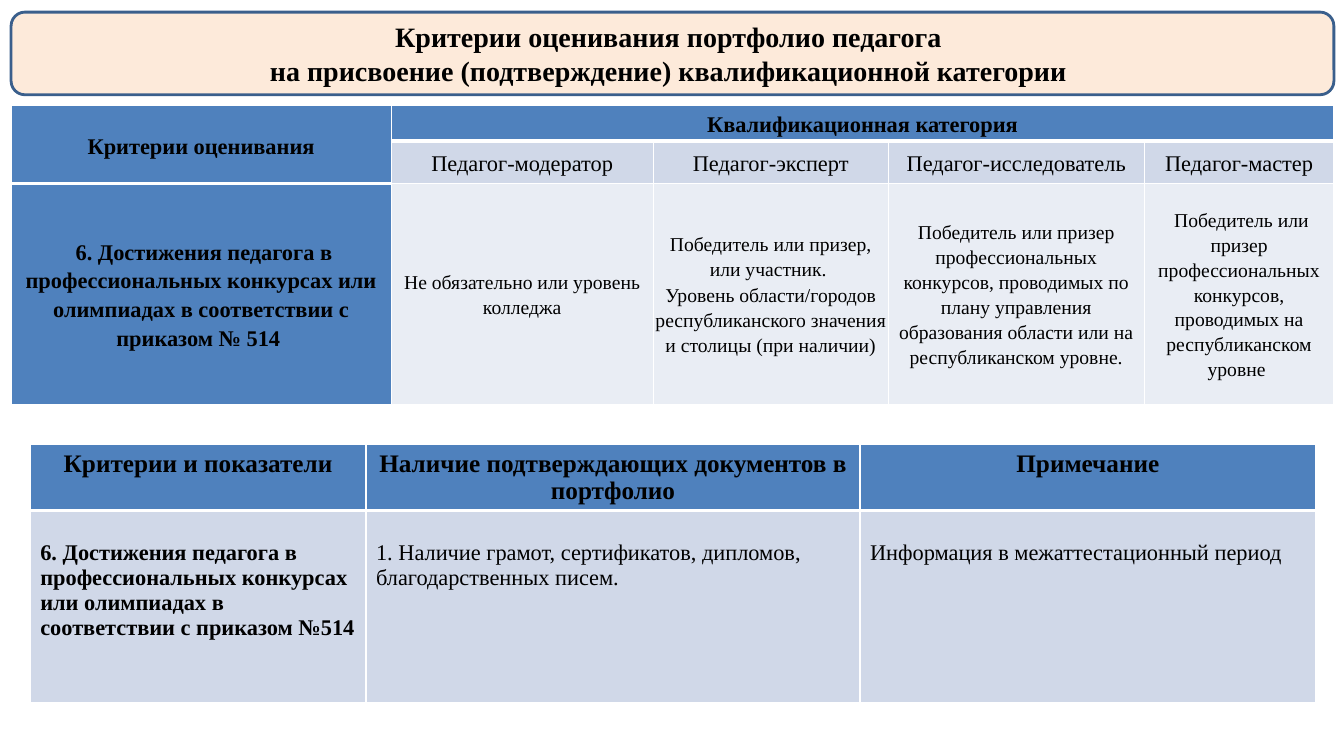
from dataclasses import dataclass

from lxml import etree
from pptx import Presentation
from pptx.dml.color import RGBColor
from pptx.enum.shapes import MSO_SHAPE
from pptx.enum.text import MSO_ANCHOR, MSO_AUTO_SIZE, PP_ALIGN
from pptx.oxml.ns import qn
from pptx.util import Inches, Pt

ROUNDED = MSO_SHAPE.ROUNDED_RECTANGLE
CENTER, LEFT = PP_ALIGN.CENTER, PP_ALIGN.LEFT
MIDDLE, TOP = MSO_ANCHOR.MIDDLE, MSO_ANCHOR.TOP
NO_AUTOFIT = MSO_AUTO_SIZE.NONE
TITLE_ONLY = 5


@dataclass(frozen=True)
class Theme:
    font: str = "Times New Roman"
    text: str = "000000"
    header: str = "4F81BD"
    band: str = "D0D8E8"
    pale: str = "E9EDF4"
    banner: str = "FDEADA"
    outline: str = "3A5F8C"
    border: str = "FFFFFF"
    title_size: int = 20
    heading_size: int = 18
    label_size: int = 16
    body_size: int = 14


THEME = Theme()


@dataclass(frozen=True)
class CellStyle:
    fill: str
    size: int
    bold: bool = False
    align: PP_ALIGN = CENTER
    anchor: MSO_ANCHOR = MIDDLE
    spacing: float = 1.15
    after: int = 1
    side: float = 0.01
    top: float = 0.01
    bottom: float = 0.01
    rule_below: int = 1


@dataclass(frozen=True)
class CellItem:
    row: int
    column: int
    text: str
    style: CellStyle
    row_span: int = 1
    column_span: int = 1


@dataclass(frozen=True)
class TableItem:
    left: float
    top: float
    columns: tuple[float, ...]
    rows: tuple[float, ...]
    cells: list[CellItem]


def write_text(frame, text: str, *, size: int, bold: bool = False,
               align: PP_ALIGN = CENTER, spacing: float = 1.0, after: int = 0) -> None:
    for index, line in enumerate(text.split("\n")):
        paragraph = frame.paragraphs[0] if index == 0 else frame.add_paragraph()
        paragraph.alignment = align
        paragraph.line_spacing = spacing
        paragraph.space_before = Pt(0)
        paragraph.space_after = Pt(after)
        run = paragraph.add_run()
        run.text = line
        run.font.name = THEME.font
        run.font.size = Pt(size)
        run.font.bold = bold
        run.font.color.rgb = RGBColor.from_string(THEME.text)


def set_borders(cell, rule_below: int) -> None:
    properties = cell._tc.get_or_add_tcPr()
    widths = {"a:lnL": 1, "a:lnR": 1, "a:lnT": 1, "a:lnB": rule_below}
    for index, (tag, width) in enumerate(widths.items()):
        line = etree.Element(qn(tag), w=str(Pt(width)))
        fill = etree.SubElement(line, qn("a:solidFill"))
        etree.SubElement(fill, qn("a:srgbClr"), val=THEME.border)
        properties.insert(index, line)


def format_cell(cell, style: CellStyle) -> None:
    cell.fill.solid()
    cell.fill.fore_color.rgb = RGBColor.from_string(style.fill)
    cell.vertical_anchor = style.anchor
    cell.margin_left = cell.margin_right = Inches(style.side)
    cell.margin_top, cell.margin_bottom = Inches(style.top), Inches(style.bottom)
    set_borders(cell, style.rule_below)


def draw_table(slide, item: TableItem) -> None:
    table = slide.shapes.add_table(
        len(item.rows), len(item.columns), Inches(item.left), Inches(item.top),
        Inches(sum(item.columns)), Inches(sum(item.rows))).table
    for column, width in zip(table.columns, item.columns):
        column.width = Inches(width)
    for row, height in zip(table.rows, item.rows):
        row.height = Inches(height)
    for entry in item.cells:
        last_row = entry.row + entry.row_span
        last_column = entry.column + entry.column_span
        for row in range(entry.row, last_row):
            for column in range(entry.column, last_column):
                format_cell(table.cell(row, column), entry.style)
        cell = table.cell(entry.row, entry.column)
        if entry.row_span * entry.column_span > 1:
            cell.merge(table.cell(last_row - 1, last_column - 1))
        style = entry.style
        write_text(cell.text_frame, entry.text, size=style.size, bold=style.bold,
                   align=style.align, spacing=style.spacing, after=style.after)


def draw_title(slide, text: str) -> None:
    place = [Inches(value) for value in (0.11, 0.12, 13.12, 0.82)]
    banner = slide.shapes.add_shape(ROUNDED, *place)
    banner.shadow.inherit = False
    banner.fill.solid()
    banner.fill.fore_color.rgb = RGBColor.from_string(THEME.banner)
    banner.line.color.rgb = RGBColor.from_string(THEME.outline)
    banner.line.width = Pt(2)
    title = slide.shapes.title
    title.left, title.top, title.width, title.height = place
    banner._element.addnext(title._element)
    frame = title.text_frame
    frame.word_wrap = True
    frame.auto_size = NO_AUTOFIT
    frame.vertical_anchor = MIDDLE
    frame.margin_top = frame.margin_bottom = Inches(0.05)
    frame.margin_right = Inches(0.18)
    write_text(frame, text, size=THEME.title_size, bold=True)


def category_table() -> TableItem:
    heading = CellStyle(THEME.header, THEME.label_size, bold=True, rule_below=3)
    criterion = CellStyle(THEME.header, THEME.label_size, bold=True)
    category = CellStyle(THEME.band, THEME.label_size)
    requirement = CellStyle(THEME.pale, THEME.body_size)
    categories = [
        ("Педагог-модератор", "Не обязательно или уровень колледжа"),
        ("Педагог-эксперт", "Победитель или призер, или участник. \nУровень области/городов "
         "республиканского значения и столицы (при наличии)"),
        ("Педагог-исследователь", "Победитель или призер профессиональных конкурсов, проводимых "
         "по плану управления образования области или на республиканском уровне."),
        ("Педагог-мастер", " Победитель или призер профессиональных конкурсов, проводимых "
         "на республиканском уровне "),
    ]
    cells = [
        CellItem(0, 0, "Критерии оценивания", heading, row_span=2),
        CellItem(0, 1, "Квалификационная категория", heading, column_span=4),
        CellItem(2, 0, " 6. Достижения педагога в профессиональных конкурсах или "
                 "олимпиадах в соответствии с приказом № 514 ", criterion),
    ]
    for column, (name, condition) in enumerate(categories, start=1):
        cells.append(CellItem(1, column, name, category))
        cells.append(CellItem(2, column, condition, requirement))
    return TableItem(0.11, 1.05, (3.77, 2.6, 2.33, 2.54, 1.88), (0.35, 0.42, 2.19), cells)


def document_table() -> TableItem:
    plain = {"anchor": TOP, "spacing": 1.0, "after": 0, "side": 0.1, "bottom": 0.05}
    heading = CellStyle(THEME.header, THEME.heading_size, bold=True, top=0.05,
                        rule_below=3, **plain)
    criterion = CellStyle(THEME.band, THEME.label_size, bold=True, align=LEFT, top=0.3, **plain)
    detail = CellStyle(THEME.band, THEME.label_size, align=LEFT, top=0.3, **plain)
    columns = [
        ("Критерии и показатели", "6. Достижения педагога в профессиональных конкурсах или "
         "олимпиадах в соответствии с приказом №514", criterion),
        ("Наличие подтверждающих документов в портфолио",
         "1. Наличие грамот, сертификатов, дипломов, благодарственных писем.", detail),
        ("Примечание", "Информация в межаттестационный период", detail),
    ]
    cells = []
    for column, (name, content, style) in enumerate(columns):
        cells.append(CellItem(0, column, name, heading))
        cells.append(CellItem(1, column, content, style))
    return TableItem(0.3, 4.41, (3.33, 4.9, 4.52), (0.65, 1.91), cells)


def main() -> None:
    presentation = Presentation()
    presentation.slide_width, presentation.slide_height = Inches(13.33), Inches(7.5)
    slide = presentation.slides.add_slide(presentation.slide_layouts[TITLE_ONLY])
    draw_title(slide, "Критерии оценивания портфолио педагога\n"
               "на присвоение (подтверждение) квалификационной категории")
    for item in (category_table(), document_table()):
        draw_table(slide, item)
    presentation.save("out.pptx")


if __name__ == "__main__":
    main()
